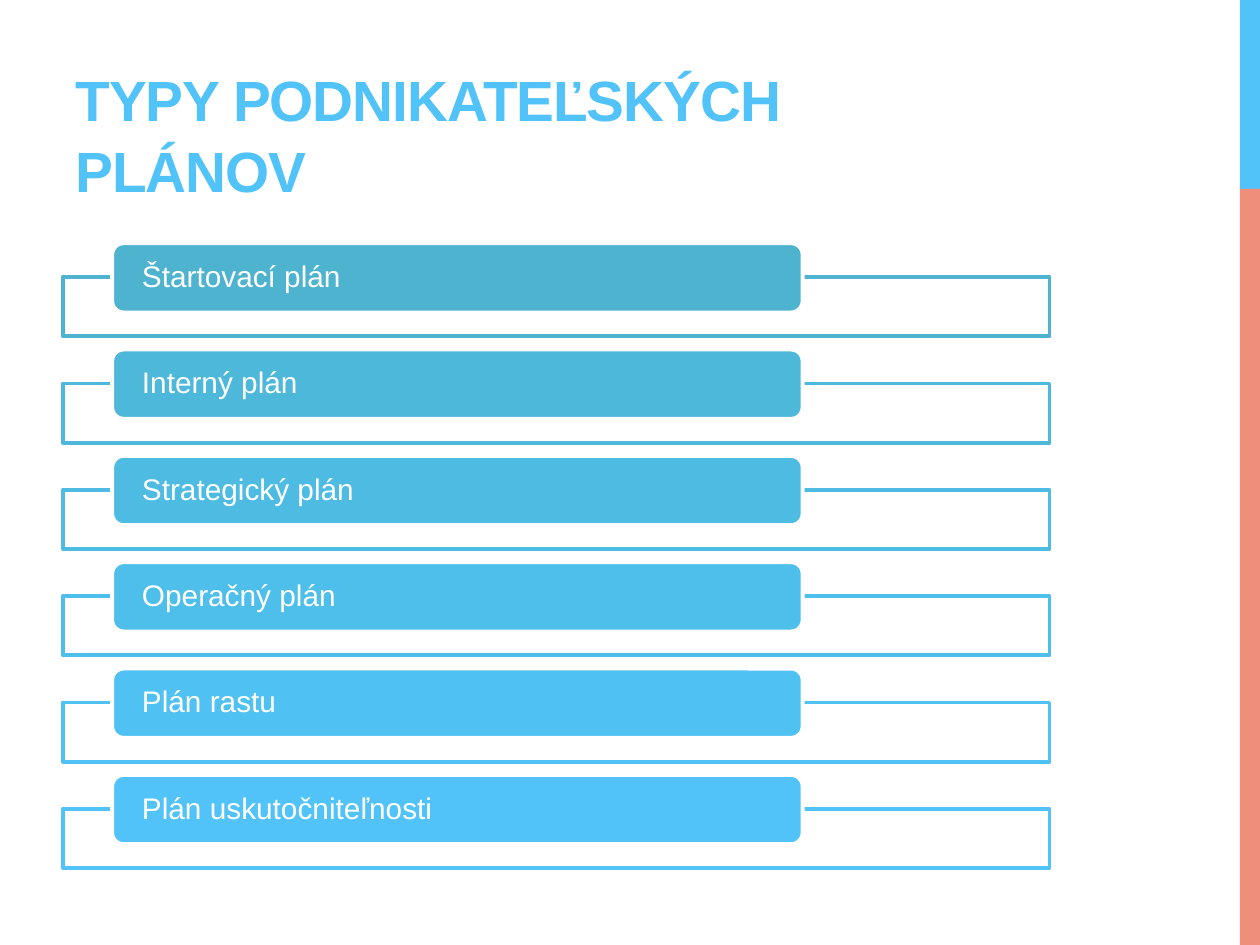
"""Build a slide listing six types of business plans as labelled bars."""
from pptx import Presentation
from pptx.dml.color import RGBColor
from pptx.enum.shapes import MSO_SHAPE as Shape
from pptx.enum.text import MSO_ANCHOR as Anchor, MSO_AUTO_SIZE as AutoSize, PP_ALIGN as Align
from pptx.oxml.xmlchemy import OxmlElement
from pptx.util import Inches, Pt


def color(value):
    return RGBColor.from_string(value)


def add_block(kind, left, top, width, height, fill, line=None):
    block = page.shapes.add_shape(kind, *map(Inches, (left, top, width, height)))
    block.shadow.inherit = False
    block.fill.solid()
    block.fill.fore_color.rgb = color(fill)
    if line:
        block.line.color.rgb = color(line)
        block.line.width = Pt(2.25)
    else:
        block.line.fill.background()
    return block


WIDTH, HEIGHT = 10, 7.5
MARGIN = WIDTH * 0.05
STRIPE = 0.16
FIRST_ROW, ROW_STEP = 1.93, 0.844
PLANS = [
    ("Štartovací plán", "4EB3CF"),
    ("Interný plán", "4DB8D9"),
    ("Strategický plán", "4DBBE2"),
    ("Operačný plán", "4EBEEA"),
    ("Plán rastu", "4FC1F2"),
    ("Plán uskutočniteľnosti", "51C3F9"),
]

deck = Presentation()
deck.slide_width, deck.slide_height = Inches(WIDTH), Inches(HEIGHT)
page = deck.slides.add_slide(deck.slide_layouts[5])

split = HEIGHT * 0.2
add_block(Shape.RECTANGLE, WIDTH - STRIPE, 0, STRIPE, split, "51C3F9")
add_block(Shape.RECTANGLE, WIDTH - STRIPE, split, STRIPE, HEIGHT - split, "EF8E7B")

title = page.shapes.title
title.left, title.top, title.width, title.height = map(Inches, (MARGIN, 0.17, 6.33, 1.5))
frame = title.text_frame
frame.word_wrap = True
frame.auto_size = AutoSize.NONE
frame.vertical_anchor = Anchor.BOTTOM
para = frame.paragraphs[0]
para.alignment = Align.LEFT
para.line_spacing = 1.04
span = para.add_run()
span.text = "TYPY PODNIKATEĽSKÝCH PLÁNOV"
span.font.name = "Arial"
span.font.size = Pt(32.4)
span.font.bold = True
span.font.color.rgb = color("51C3F9")
span.font._element.set("spc", "-60")

for row, (label, tint) in enumerate(PLANS):
    top = FIRST_ROW + row * ROW_STEP
    outline = add_block(Shape.RECTANGLE, MARGIN, top + 0.27, 7.83, 0.47, "FFFFFF", tint)
    alpha = OxmlElement("a:alpha")
    alpha.set("val", "90000")
    outline.fill._xPr.solidFill[0].append(alpha)

    bar = add_block(Shape.ROUNDED_RECTANGLE, MARGIN + 0.39, top, 5.48, 0.55, tint, "FFFFFF")
    frame = bar.text_frame
    frame.word_wrap = True
    frame.vertical_anchor = Anchor.MIDDLE
    frame.margin_left = frame.margin_right = Inches(0.21)
    frame.margin_top = frame.margin_bottom = 0
    para = frame.paragraphs[0]
    para.alignment = Align.LEFT
    para.line_spacing = 0.9
    span = para.add_run()
    span.text = label
    span.font.name = "Arial"
    span.font.size = Pt(17)
    span.font.color.rgb = color("FFFFFF")

deck.save("out.pptx")
